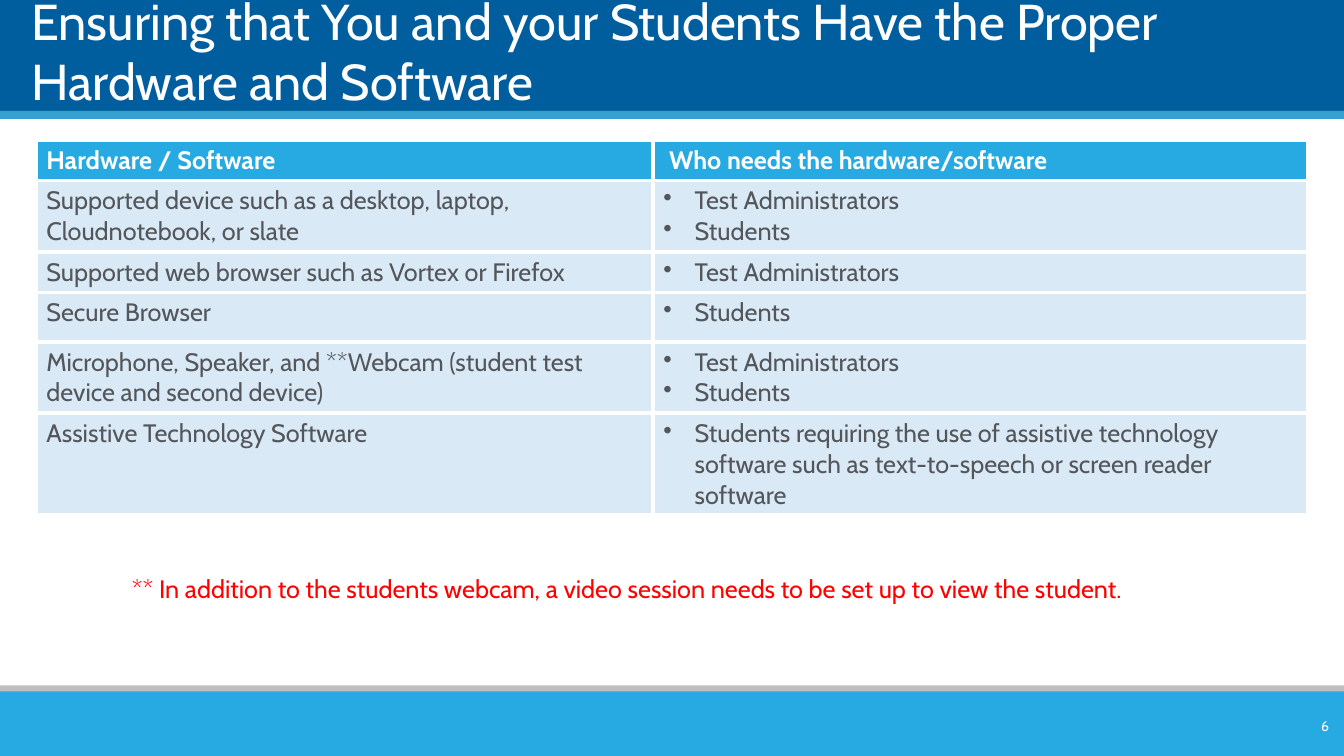
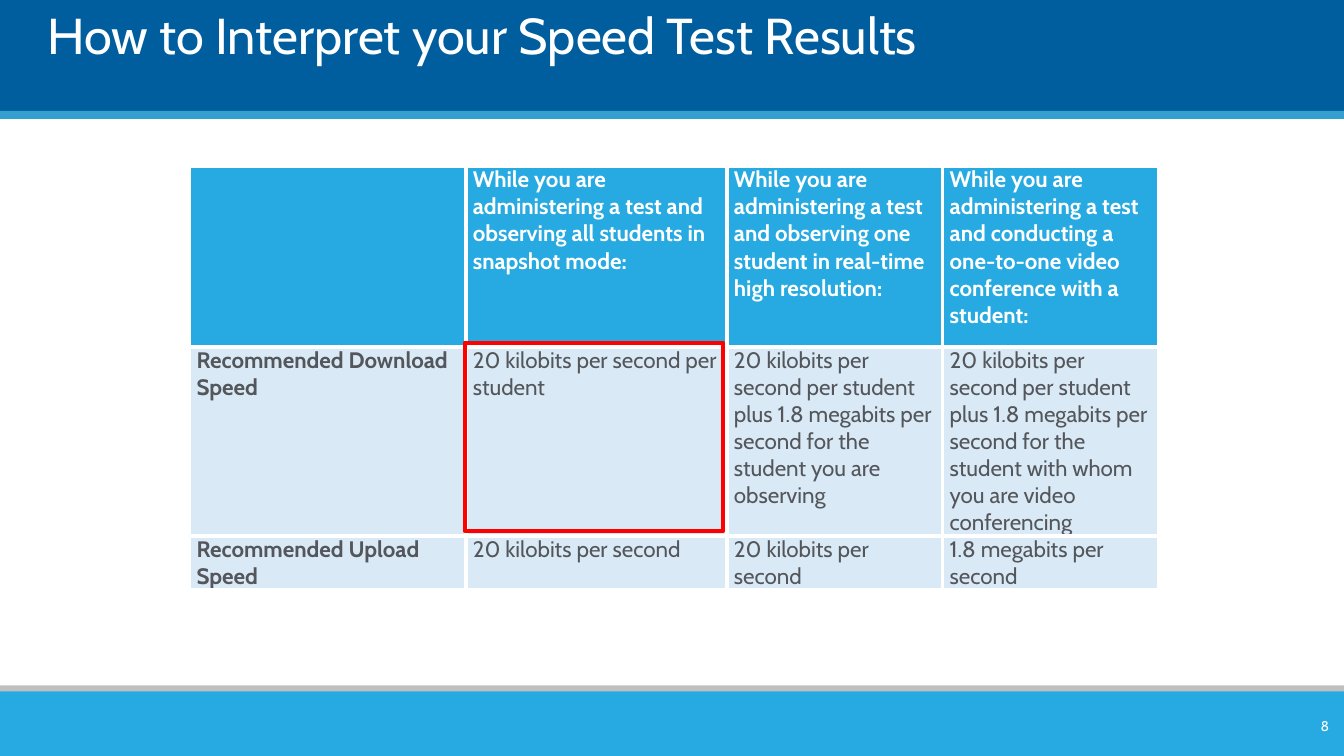
from dataclasses import dataclass

import pptx
import pptx.dml.color
import pptx.enum.shapes
import pptx.enum.text
import pptx.oxml
import pptx.oxml.ns
import pptx.util
from pptx.util import Inches

TITLE_ONLY_LAYOUT = 5
BULLET_INDENT = Inches(0.31)


@dataclass(frozen=True)
class Theme:
    font: str = "Cabin"
    white: str = "FFFFFF"
    navy: str = "005E9E"
    teal: str = "35A0CE"
    grey: str = "BFBFBF"
    sky: str = "27AAE1"
    pale: str = "DAE9F6"
    ink: str = "53565A"
    red: str = "FF0000"
    title_size: int = 36
    body_size: int = 18
    compact_size: int = 16
    page_size: int = 10
    line_width: int = 3


THEME = Theme()

BANDS = [  # top, height, colour
    (-0.01, 1.15, THEME.navy),
    (1.1, 0.08, THEME.teal),
    (6.8, 0.14, THEME.grey),
    (6.86, 0.64, THEME.sky),
]

ADMINISTRATORS, STUDENTS = "Test Administrators", "Students"

# In both tables a cell is a text, or a list of bulleted texts.
HARDWARE_ROWS = [
    ["Hardware / Software", " Who needs the hardware/software"],
    ["Supported device such as a desktop, laptop, Cloudnotebook, or slate",
     [ADMINISTRATORS, STUDENTS]],
    ["Supported web browser such as Vortex or Firefox", [ADMINISTRATORS]],
    ["Secure Browser", [STUDENTS]],
    ["Microphone, Speaker, and **Webcam (student test device and second device)",
     [ADMINISTRATORS, STUDENTS]],
    ["Assistive Technology Software",
     ["Students requiring the use of assistive technology software such as "
      "text-to-speech or screen reader software"]],
]

SPEED_ROWS = [
    ["",
     "While you are administering a test and observing all students in snapshot mode:",
     "While you are administering a test and observing one student in real-time "
     "high resolution:",
     "While you are administering a test and conducting a one-to-one video "
     "conference with a student:"],
    ["Recommended Download Speed",
     "20 kilobits per second per student",
     "20 kilobits per second per student plus 1.8 megabits per second for the "
     "student you are observing",
     "20 kilobits per second per student plus 1.8 megabits per second for the "
     "student with whom you are video conferencing"],
    ["Recommended Upload Speed",
     "20 kilobits per second",
     "20 kilobits per second",
     "1.8 megabits per second"],
]


def rgb(colour):
    return pptx.dml.color.RGBColor.from_string(colour)


def add_run(paragraph, text, size, colour, bold=False):
    run = paragraph.add_run()
    run.text = text
    font = run.font
    font.name = THEME.font
    font.size = pptx.util.Pt(size)
    font.bold = bold
    font.color.rgb = rgb(colour)


def add_rectangle(slide, box, fill=None, line=None):
    rectangle = slide.shapes.add_shape(
        pptx.enum.shapes.MSO_SHAPE.RECTANGLE, *map(Inches, box))
    rectangle.shadow.inherit = False
    if fill:
        rectangle.fill.solid()
        rectangle.fill.fore_color.rgb = rgb(fill)
    else:
        rectangle.fill.background()
    if line:
        rectangle.line.color.rgb = rgb(line)
        rectangle.line.width = pptx.util.Pt(THEME.line_width)
    else:
        rectangle.line.fill.background()
    return rectangle


def move_bands_to_layout(slide):
    """Draw the bands through a slide, then hand them to its layout for all slides."""
    layout_tree = slide.slide_layout.shapes.element
    for position, (top, height, colour) in enumerate(BANDS, start=2):
        band = add_rectangle(slide, (0, top, 13.33, height), fill=colour)
        layout_tree.insert(position, band.element)


def add_text(slide, box, text, size, colour, align=None, anchor=None):
    frame = slide.shapes.add_textbox(*map(Inches, box)).text_frame
    frame.word_wrap = True
    frame.vertical_anchor = anchor
    paragraph = frame.paragraphs[0]
    paragraph.alignment = align
    add_run(paragraph, text, size, colour)


def set_title(slide, box, text):
    title = slide.shapes.title
    title.left, title.top, title.width, title.height = map(Inches, box)
    frame = title.text_frame
    frame.word_wrap = True
    frame.auto_size = pptx.enum.text.MSO_AUTO_SIZE.NONE
    frame.vertical_anchor = pptx.enum.text.MSO_ANCHOR.BOTTOM
    frame.margin_left = frame.margin_right = 0
    frame.margin_top = frame.margin_bottom = 0
    paragraph = frame.paragraphs[0]
    paragraph.alignment = pptx.enum.text.PP_ALIGN.LEFT
    add_run(paragraph, text, THEME.title_size, THEME.white)


def add_titled_slide(deck, title_box, title, page_number):
    slide = deck.slides.add_slide(deck.slide_layouts[TITLE_ONLY_LAYOUT])
    set_title(slide, title_box, title)
    add_text(slide, (12.51, 7.05, 0.77, 0.3), page_number, THEME.page_size,
             THEME.white, pptx.enum.text.PP_ALIGN.RIGHT,
             pptx.enum.text.MSO_ANCHOR.MIDDLE)
    return slide


def add_bullet(paragraph):
    properties = paragraph._p.get_or_add_pPr()
    properties.set("marL", str(BULLET_INDENT))
    properties.set("indent", str(-BULLET_INDENT))
    properties.append(pptx.oxml.parse_xml(
        f'<a:buChar {pptx.oxml.ns.nsdecls("a")} char="•"/>'))


def set_cell_borders(cell):
    """Borders come before the fill in the cell properties."""
    properties = cell._tc.get_or_add_tcPr()
    for position, side in enumerate(("lnL", "lnR", "lnT", "lnB")):
        properties.insert(position, pptx.oxml.parse_xml(
            f'<a:{side} {pptx.oxml.ns.nsdecls("a")} '
            f'w="{pptx.util.Pt(THEME.line_width)}"><a:solidFill>'
            f'<a:srgbClr val="{THEME.white}"/></a:solidFill></a:{side}>'))


def fill_cell(cell, content, size, colour, fill, bold, space_after):
    cell.fill.solid()
    cell.fill.fore_color.rgb = rgb(fill)
    set_cell_borders(cell)
    bulleted = isinstance(content, list)
    frame = cell.text_frame
    for index, text in enumerate(content if bulleted else [content]):
        paragraph = frame.add_paragraph() if index else frame.paragraphs[0]
        if bulleted:
            add_bullet(paragraph)
        if space_after:
            paragraph.space_after = pptx.util.Pt(space_after)
        if text:
            add_run(paragraph, text, size, colour, bold)


def add_grid(slide, left, top, widths, heights, rows, size,
             bold_labels=False, margins=None, space_after=0):
    """Add a table with a header row; margins are (side, top and bottom)."""
    table = slide.shapes.add_table(
        len(heights), len(widths), Inches(left), Inches(top),
        Inches(sum(widths)), Inches(sum(heights))).table
    for column, width in zip(table.columns, widths):
        column.width = Inches(width)
    for row, height in zip(table.rows, heights):
        row.height = Inches(height)
    for r, contents in enumerate(rows):
        header = r == 0
        for c, content in enumerate(contents):
            cell = table.cell(r, c)
            if margins:
                cell.margin_left = cell.margin_right = Inches(margins[0])
                cell.margin_top = cell.margin_bottom = Inches(margins[1])
            fill_cell(cell, content, size,
                      colour=THEME.white if header else THEME.ink,
                      fill=THEME.sky if header else THEME.pale,
                      bold=header or (bold_labels and c == 0),
                      space_after=space_after)


def add_hardware_slide(deck):
    slide = add_titled_slide(
        deck, (0.31, 0.09, 12.2, 1.01),
        "Ensuring that You and your Students Have the Proper Hardware and Software", "6")
    add_grid(slide, 0.36, 1.39, [6.12, 6.49], [0.4, 0.71, 0.4, 0.49, 0.71, 1.01],
             HARDWARE_ROWS, THEME.body_size)
    add_text(slide, (1.21, 5.64, 10.41, 0.4),
             "** In addition to the students webcam, a video session needs to be "
             "set up to view the student.", THEME.body_size, THEME.red)
    return slide


def add_speed_slide(deck):
    slide = add_titled_slide(deck, (0.47, 0.07, 12.43, 0.57),
                             "How to Interpret your Speed Test Results", "8")
    add_grid(slide, 1.88, 1.65, [2.74, 2.59, 2.14, 2.14], [1.79, 1.88, 0.51],
             SPEED_ROWS, THEME.compact_size, bold_labels=True,
             margins=(0.07, 0), space_after=6)
    add_rectangle(slide, (4.61, 3.4, 2.56, 1.87), line=THEME.red)


def main():
    deck = pptx.Presentation()
    deck.slide_width, deck.slide_height = Inches(13.33), Inches(7.5)
    move_bands_to_layout(add_hardware_slide(deck))
    add_speed_slide(deck)
    deck.save("out.pptx")


if __name__ == "__main__":
    main()
